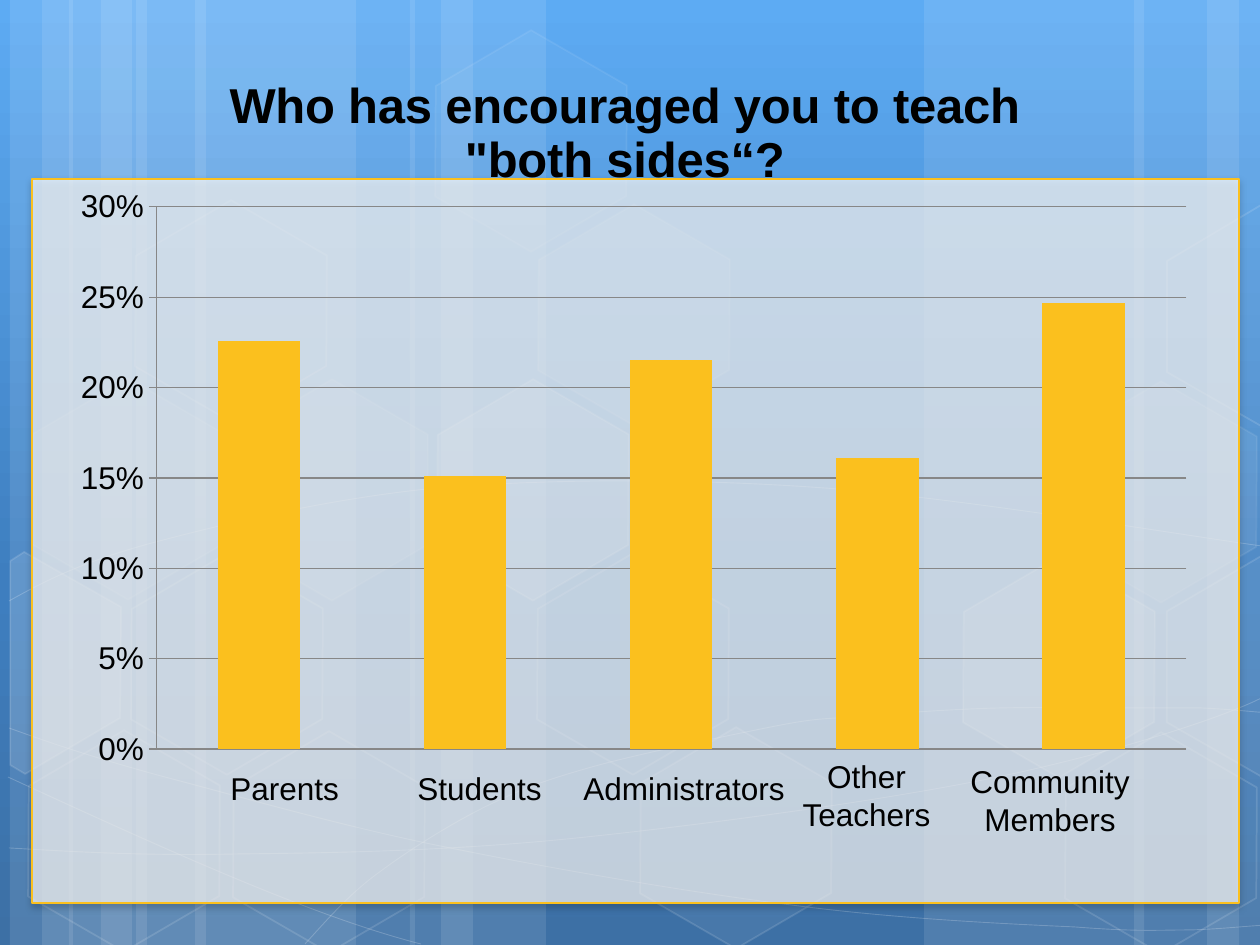
from dataclasses import dataclass
from math import cos, radians, sin
from pptx import Presentation
from pptx.chart.data import CategoryChartData as Data
from pptx.dml.color import RGBColor as Rgb
from pptx.enum.chart import XL_CHART_TYPE as Kind, XL_TICK_MARK as Tick
from pptx.enum.shapes import MSO_SHAPE as Form
from pptx.enum.text import PP_ALIGN as Align
from pptx.oxml import parse_xml
from pptx.oxml.ns import nsdecls, qn
from pptx.util import Pt


@dataclass(frozen=True)
class Theme:
    """Colours, fonts and type sizes."""
    sky: tuple = ((0, "5DABF3"), (0.62, "3E7EBF"), (1, "3D70A5"))
    white: str = "FFFFFF"
    gold: str = "FBC01E"
    ink: str = "000000"
    grid: str = "878787"
    face: str = "Arial"
    base: str = "TeX Gyre Adventor"
    head: int = 28
    label: int = 18
    small: int = 10


THEME = Theme()
WIDE, HIGH, TILT = 1260, 945, 30
BANDS = ((136, 220, 0), (10, 63, 0), (42, 105, 0), (195, 220, 0), (69, 63, 0),
         (101, 105, 0), (924, 220, 180), (1207, 63, 180), (1134, 105, 180),
         (410, 63, 0), (441, 105, 0))
CURVES = (
    ((9, 848), (77, 852), (145, 856), (239, 854), (334, 853), (451, 851), (577, 838),
     (703, 825), (882, 801), (998, 777), (1113, 753), (1231, 716), (1269, 694)),
    ((9, 601), (45, 581), (82, 562), (152, 543), (224, 524), (326, 499), (437, 488),
     (549, 479), (685, 478), (824, 488), (963, 498), (1193, 537), (1269, 547)),
    ((8, 777), (160, 847), (311, 916), (421, 944)),
    ((9, 728), (48, 742), (88, 756), (161, 776), (234, 795), (344, 827), (450, 848),
     (554, 869), (687, 892), (791, 905), (896, 919), (1008, 924), (1075, 927),
     (1140, 932), (1158, 930), (1191, 930), (1223, 929), (1246, 926), (1269, 925)),
    ((305, 944), (328, 919), (350, 893), (381, 871), (412, 848), (454, 822), (489, 805),
     (524, 788), (546, 780), (592, 767), (638, 754), (722, 737), (766, 728),
     (811, 719), (818, 719), (857, 717), (896, 713), (958, 709), (1000, 708),
     (1045, 707), (1116, 708), (1116, 708), (1116, 708), (1201, 708), (1201, 708),
     (1223, 709), (1245, 711), (1256, 712), (1268, 713), (1264, 712), (1268, 713)),
)
CELLS = ((423, 394, 10, 12), (523, 568, 0, 12), (524, 219, 7, 8), (421, 45, 4, 8),
         (626, 742, 6, 12), (14, 745, 0, 12), (18, 393, 7, 8), (117, 568, 0, 12),
         (219, 746, 0, 12), (222, 394, 7, 8), (121, 215, 0, 12), (949, 571, 10, 12),
         (1051, 747, 0, 12), (1051, 396, 7, 8))
PARTS = (
    (((10, 561), (24, 552), (121, 607), (120, 718), (25, 774), (10, 765)), (45, 674), 10),
    (((1167, 611), (1261, 556), (1271, 562), (1271, 772), (1263, 777), (1167, 722)),
     (1241, 655), 4),
    (((1167, 261), (1261, 205), (1273, 212), (1271, 422), (1263, 427), (1167, 372)),
     (1241, 304), 0),
)


def px(num):
    """Turn px into EMU."""
    return round(num * 914400 / 126)


def hue(code):
    """Turn a hex code into a colour."""
    return Rgb.from_string(code)


def fade(node, rate):
    """Set the opacity, in percent, of the colours in a node."""
    for tone in node.iter(qn("a:srgbClr")):
        tone.append(parse_xml(f'<a:alpha {nsdecls("a")} val="{rate * 1000}"/>'))


def paint(shape, fill=0, edge=0, width=1, tone=THEME.white):
    """Give a shape a white fill and a line; fill and edge are opacities."""
    shape.shadow.inherit = False
    shape.fill.background()
    if fill:
        shape.fill.solid()
        shape.fill.fore_color.rgb = hue(THEME.white)
        fade(shape.element.spPr.find(qn("a:solidFill")), fill)
    shape.line.fill.background()
    if edge:
        shape.line.color.rgb = hue(tone)
        shape.line.width = Pt(width)
        fade(shape.element.spPr.find(qn("a:ln")), edge)


def block(slide, form, box):
    """Add a preset shape in a px box."""
    return slide.shapes.add_shape(form, *map(px, box))


def trace(slide, spots, close):
    """Draw a free outline through px points."""
    first, *rest = [(px(x), px(y)) for x, y in spots]
    pen = slide.shapes.build_freeform(*first)
    pen.add_line_segments(rest, close=close)
    return pen.convert_to_shape()


def curve(slide, knots):
    """Draw a chain of cubic curves, with straight parts kept as lines."""
    shape = trace(slide, knots, False)
    legs = list(shape.element.iter(qn("a:lnTo")))
    for i in range(0, len(legs), 3):
        start, one, two, end = knots[i:i + 4]
        trio = legs[i:i + 3]
        if start == one and two == end:
            for leg in trio[:2]:
                leg.getparent().remove(leg)
            continue
        arc = parse_xml(f'<a:cubicBezTo {nsdecls("a")}/>')
        trio[0].addprevious(arc)
        for leg in trio:
            arc.append(leg[0])
            leg.getparent().remove(leg)
    return shape


def turn(spot, mid, angle):
    """Turn a point about a middle, in degrees."""
    c, s = cos(radians(angle)), sin(radians(angle))
    x, y = spot[0] - mid[0], spot[1] - mid[1]
    return mid[0] + x * c - y * s, mid[1] + x * s + y * c


def scene(slide):
    """Fill the backdrop and draw its bands, curves and hexagons."""
    fill = slide.background.fill
    fill.gradient()
    fill.gradient_angle = 270
    stops = slide.element.find(".//" + qn("a:gsLst"))
    stops.append(parse_xml(f'<a:gs {nsdecls("a")} pos="0"><a:srgbClr val="{THEME.ink}"/></a:gs>'))
    for stop, (spot, code) in zip(fill.gradient_stops, THEME.sky):
        stop.position = spot
        stop.color.rgb = hue(code)
    for left, width, angle in BANDS:
        band = block(slide, Form.RECTANGLE, (left, 0, width, HIGH))
        band.rotation = angle
        paint(band, 10)
    for knots in CURVES:
        paint(curve(slide, knots), edge=20, width=0.5)
    for left, top, rate, edge in CELLS:
        cell = block(slide, Form.HEXAGON, (left, top, 220, 192))
        cell.adjustments[0] = 0.285
        cell.rotation = TILT
        paint(cell, rate, edge)
    for spots, mid, rate in PARTS:
        part = trace(slide, [turn(spot, mid, -TILT) for spot in spots], True)
        part.rotation = TILT
        paint(part, rate, 12)


def panel(slide, box):
    """Place the pale panel with its soft shadow."""
    card = block(slide, Form.RECTANGLE, box)
    paint(card, 70, 100, 0.75, THEME.gold)
    card.element.spPr.find(qn("a:effectLst")).append(parse_xml(
        f'<a:outerShdw {nsdecls("a")} blurRad="{Pt(4)}" dist="{Pt(2)}" dir="5400000" '
        f'rotWithShape="0"><a:srgbClr val="{THEME.ink}"><a:alpha val="28000"/>'
        '</a:srgbClr></a:outerShdw>'))


def style(font, size, face=THEME.face, bold=False):
    """Set a font in the ink colour."""
    font.size, font.name, font.bold = Pt(size), face, bold
    font.color.rgb = hue(THEME.ink)


def graph(slide, box):
    """Place the column chart with its title."""
    data = Data(number_format="0%")
    data.categories = ["1", "2", "3", "4", "5"]
    data.add_series("Series 1", (0.226, 0.151, 0.215, 0.161, 0.247))
    chart = slide.shapes.add_chart(Kind.COLUMN_STACKED, *map(px, box), data).chart
    style(chart.font, THEME.small, THEME.base)
    chart.has_legend = False
    run = chart.chart_title.text_frame.paragraphs[0].add_run()
    run.text = 'Who has encouraged you to teach "both sides“?'
    style(run.font, THEME.head, bold=True)
    chart.category_axis.visible = False
    axis = chart.value_axis
    axis.minimum_scale, axis.maximum_scale, axis.major_unit = 0, 0.3, 0.05
    axis.major_tick_mark = Tick.OUTSIDE
    axis.tick_labels.number_format = "0%"
    axis.tick_labels.number_format_is_linked = False
    style(axis.tick_labels.font, THEME.label)
    for part in (axis.format.line, axis.major_gridlines.format.line):
        part.color.rgb = hue(THEME.grid)
        part.width = Pt(0.75)
    plot = chart.plots[0]
    plot.gap_width, plot.overlap, plot.vary_by_categories = 150, 100, False
    bars = plot.series[0].format.fill
    bars.solid()
    bars.fore_color.rgb = hue(THEME.gold)
    area = chart.element.find(".//" + qn("c:plotArea"))
    for old in area.findall(qn("c:layout")):
        area.remove(old)
    rules = [("layoutTarget", "inner"), ("xMode", "edge"), ("yMode", "edge"),
             ("x", 0.083), ("y", 0.194), ("w", 0.917), ("h", 0.638)]
    inner = "".join(f'<c:{tag} val="{val}"/>' for tag, val in rules)
    area.insert(0, parse_xml(f'<c:layout {nsdecls("c")}><c:manualLayout>{inner}'
                             '</c:manualLayout></c:layout>'))


def label(slide, box, text, align=Align.CENTER, tabs=()):
    """Place bar names, with tab stops in px where needed."""
    frame = slide.shapes.add_textbox(*map(px, box)).text_frame
    frame.word_wrap = True
    frame.text = text
    for line in frame.paragraphs:
        line.alignment = align
        style(line.font, THEME.label)
        if tabs:
            stops = "".join(f'<a:tab pos="{px(tab)}" algn="l"/>' for tab in tabs)
            line.font._element.getparent().insert(0, parse_xml(
                f'<a:tabLst {nsdecls("a")}>{stops}</a:tabLst>'))


def main():
    """Build and save the slide."""
    deck = Presentation()
    deck.slide_width, deck.slide_height = px(WIDE), px(HIGH)
    slide = deck.slides.add_slide(deck.slide_layouts[6])
    scene(slide)
    panel(slide, (32, 179, 1207, 724))
    graph(slide, (63, 42, 1124, 850))
    label(slide, (218, 763, 598, 50), "Parents\tStudents\tAdministrators", Align.LEFT, (187, 353))
    label(slide, (788, 751, 157, 89), "Other\nTeachers")
    label(slide, (945, 756, 210, 89), "Community\nMembers")
    deck.save("out.pptx")


if __name__ == "__main__":
    main()
